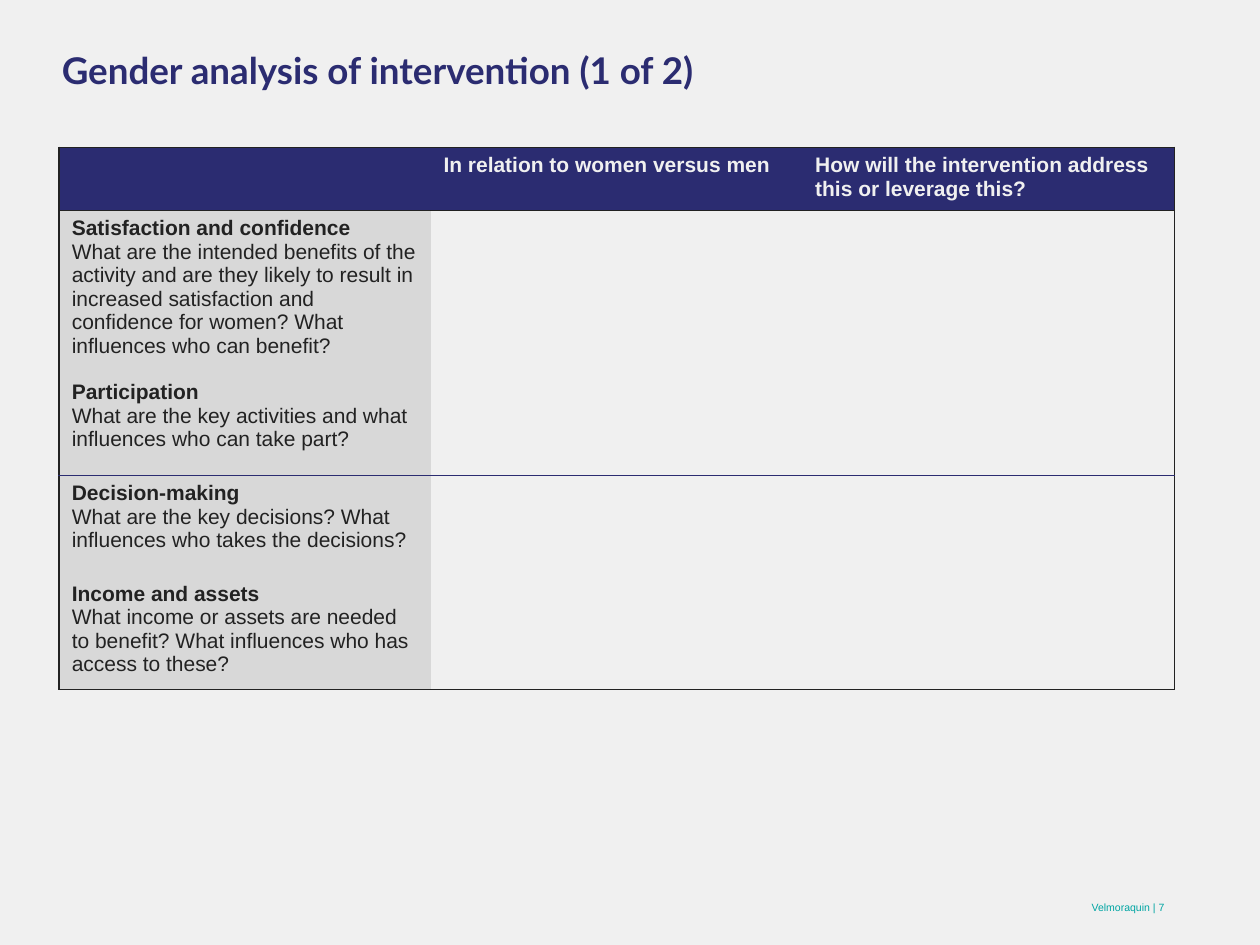
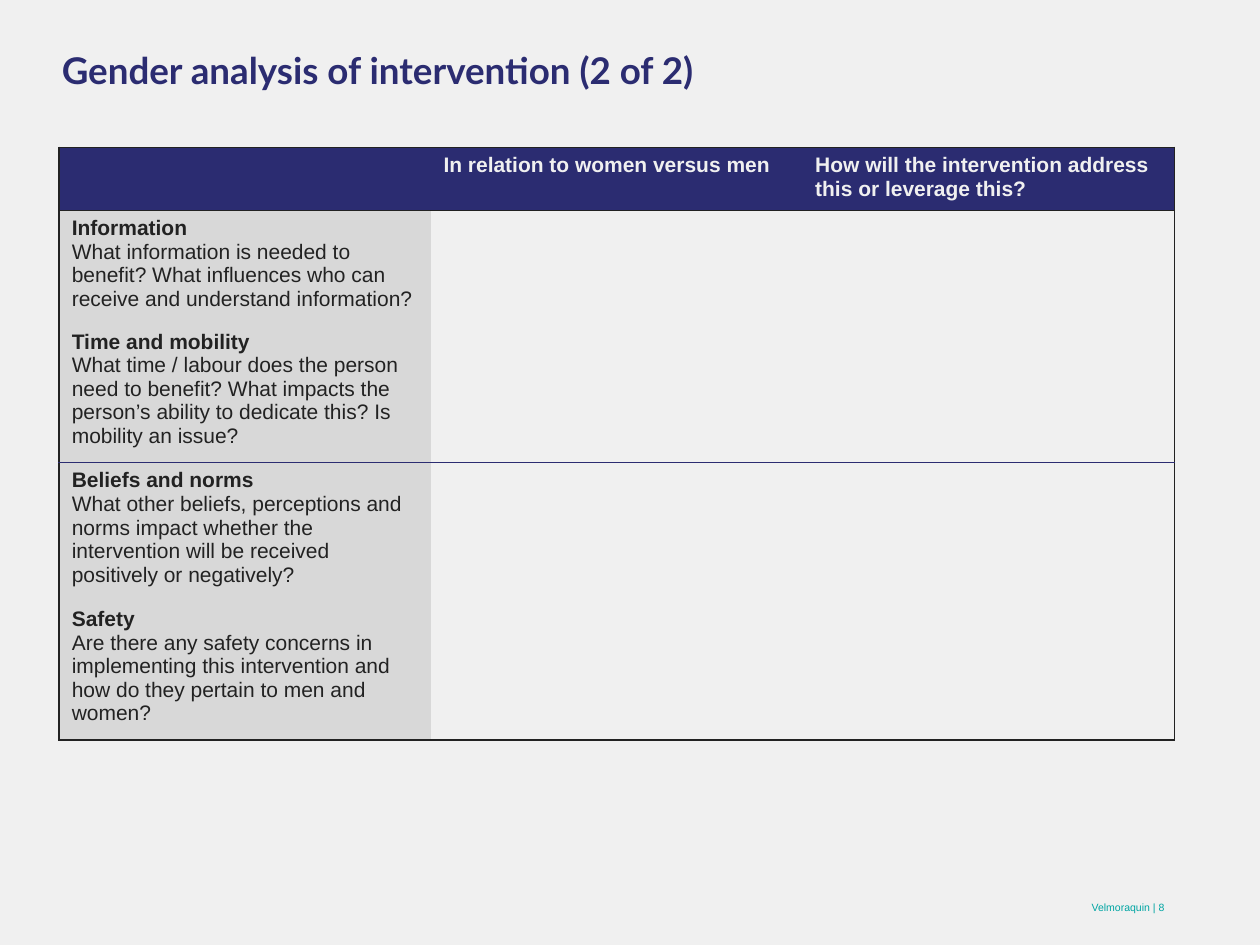
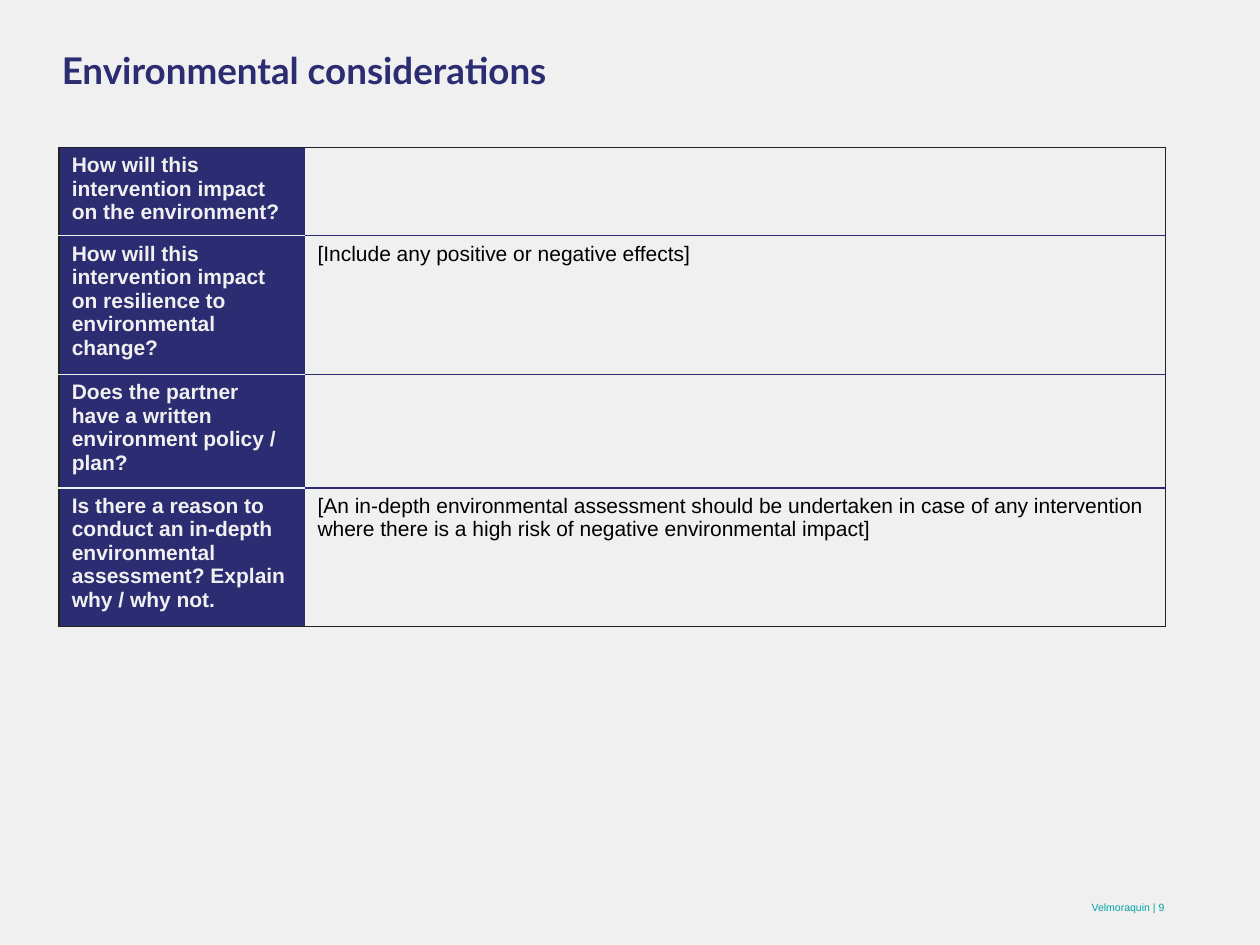
from dataclasses import dataclass
from typing import NamedTuple, Optional

import pptx
import pptx.dml.color
import pptx.enum.text
import pptx.oxml.ns
import pptx.util
from lxml import etree
from pptx.util import Inches, Pt

COLORS = {
    "paper": "F0F0F0",
    "navy": "2B2C71",
    "ink": "222222",
    "gray": "D8D8D8",
    "teal": "00A5A3",
    "black": "000000",
}
TITLE_FONT = "Lato"
BODY_FONT = "Arial"
ORGANISATION = "Velmoraquin"
FIRST_PAGE = 7
TABLE_LEFT, TABLE_TOP = 0.47, 1.17


class Line(NamedTuple):
    color: str
    width: float


class Text(NamedTuple):
    words: str
    color: str
    bold: bool = False


class Cell(NamedTuple):
    texts: tuple[Text, ...] = ()
    fill: Optional[str] = None


@dataclass
class TableSlide:
    """rows are least heights; rules maps a row to the lines above it, one for each column."""
    title: str
    columns: list[float]
    rows: list[float]
    cells: list[list[Cell]]
    rules: dict[int, list[Line]]


OUTLINE = Line("ink", 1)
NAVY_RULE = Line("navy", 1)
PAPER_RULE = Line("paper", 1)
SECTION_RULE = Line("navy", 0.75)


def rgb(color: str) -> pptx.dml.color.RGBColor:
    return pptx.dml.color.RGBColor.from_string(COLORS[color])


def style(paragraph, font_name: str, size: float, color: str, bold: bool = False) -> None:
    font = paragraph.font
    font.name, font.size, font.bold = font_name, Pt(size), bold
    font.color.rgb = rgb(color)


def add_title(slide, words: str) -> None:
    title = slide.shapes.title
    title.left, title.top = Inches(0.39), Inches(0.33)
    title.width, title.height = Inches(8.87), Inches(0.58)
    frame = title.text_frame
    frame.text = words
    frame.vertical_anchor = pptx.enum.text.MSO_ANCHOR.TOP
    paragraph = frame.paragraphs[0]
    paragraph.alignment = pptx.enum.text.PP_ALIGN.LEFT
    style(paragraph, TITLE_FONT, 21, "navy", True)


def add_footer(slide, page: int) -> None:
    footer = slide.shapes.add_textbox(Inches(7.01), Inches(7), Inches(2.33), Inches(0.4))
    frame = footer.text_frame
    frame.word_wrap = True
    frame.vertical_anchor = pptx.enum.text.MSO_ANCHOR.MIDDLE
    frame.text = f"{ORGANISATION} | {page}"
    paragraph = frame.paragraphs[0]
    paragraph.alignment = pptx.enum.text.PP_ALIGN.RIGHT
    style(paragraph, BODY_FONT, 6, "teal")


def set_borders(cell, borders: dict[str, Optional[Line]]) -> None:
    """Write the four edges; an edge without a line is cleared."""
    properties = cell._tc.get_or_add_tcPr()
    qn = pptx.oxml.ns.qn
    for side in "LRTB":
        line = borders[side]
        edge = etree.SubElement(properties, qn(f"a:ln{side}"))
        if line is None:
            etree.SubElement(edge, qn("a:noFill"))
        else:
            edge.set("w", str(Pt(line.width)))
            fill = etree.SubElement(edge, qn("a:solidFill"))
            etree.SubElement(fill, qn("a:srgbClr"), val=COLORS[line.color])


def fill_cell(cell, content: Cell) -> None:
    if content.fill:
        cell.fill.solid()
        cell.fill.fore_color.rgb = rgb(content.fill)
    else:
        cell.fill.background()
    frame = cell.text_frame
    frame.text = "\n".join(text.words for text in content.texts)
    for paragraph, text in zip(frame.paragraphs, content.texts):
        style(paragraph, BODY_FONT, 12, text.color, text.bold)


def add_table(slide, content: TableSlide) -> None:
    row_count, column_count = len(content.rows), len(content.columns)
    shape = slide.shapes.add_table(
        row_count, column_count, Inches(TABLE_LEFT), Inches(TABLE_TOP),
        Inches(sum(content.columns)), Inches(sum(content.rows)))
    table = shape.table
    table.first_row = table.horz_banding = False
    for column, width in zip(table.columns, content.columns):
        column.width = Inches(width)
    for row, height in zip(table.rows, content.rows):
        row.height = Inches(height)

    # Outer edges frame the table; neighbours agree on each inner line.
    rules = {0: [OUTLINE] * column_count, **content.rules, row_count: [OUTLINE] * column_count}
    no_rule = [None] * column_count
    for r, row_cells in enumerate(content.cells):
        for c, cell_content in enumerate(row_cells):
            cell = table.cell(r, c)
            set_borders(cell, {
                "L": OUTLINE if c == 0 else None,
                "R": OUTLINE if c == column_count - 1 else None,
                "T": rules.get(r, no_rule)[c],
                "B": rules.get(r + 1, no_rule)[c],
            })
            fill_cell(cell, cell_content)


def header(words: str) -> Cell:
    return Cell((Text(words, "paper", True),), "navy")


def gender_slide(part: int, rows: list[float], topics: list[tuple[str, str]]) -> TableSlide:
    cells = [[Cell(fill="navy"), header("In relation to women versus men"),
              header("How will the intervention address this or leverage this?")]]
    for topic, question in topics:
        texts = (Text(topic, "ink", True), Text(question, "ink"))
        cells.append([Cell(texts, "gray"), Cell(), Cell()])
    return TableSlide(f"Gender analysis of intervention ({part} of 2)", [2.95] * 3, rows,
                      cells, {1: [OUTLINE] * 3, 3: [SECTION_RULE] * 3})


def environment_slide(answers: list[tuple[str, str]]) -> TableSlide:
    cells = [[header(question), Cell((Text(hint, "black"),))] for question, hint in answers]
    rules = {row: [PAPER_RULE, NAVY_RULE] for row in range(1, len(cells))}
    return TableSlide("Environmental considerations", [1.95, 6.83],
                      [0.58] * len(cells), cells, rules)


SLIDES = [
    gender_slide(1, [0.5, 1.15, 0.8, 0.8, 0.8], [
        ("Satisfaction and confidence",
         "What are the intended benefits of the activity and are they likely to result in "
         "increased satisfaction and confidence for women? What influences who can benefit?"),
        ("Participation",
         "What are the key activities and what influences who can take part?"),
        ("Decision-making",
         "What are the key decisions? What influences who takes the decisions?"),
        ("Income and assets",
         "What income or assets are needed to benefit? What influences who has access to these?"),
    ]),
    gender_slide(2, [0.48, 0.53, 0.7, 0.53, 0.53], [
        ("Information",
         "What information is needed to benefit? What influences who can receive and "
         "understand information?"),
        ("Time and mobility",
         "What time / labour does the person need to benefit? What impacts the person’s "
         "ability to dedicate this? Is mobility an issue?"),
        ("Beliefs and norms",
         "What other beliefs, perceptions and norms impact whether the intervention will be "
         "received positively or negatively?"),
        ("Safety",
         "Are there any safety concerns in implementing this intervention and how do they "
         "pertain to men and women?"),
    ]),
    environment_slide([
        ("How will this intervention impact on the environment?", ""),
        ("How will this intervention impact on resilience to environmental change?",
         "[Include any positive or negative effects]"),
        ("Does the partner have a written environment policy / plan?", ""),
        ("Is there a reason to conduct an in-depth environmental assessment? "
         "Explain why / why not.",
         "[An in-depth environmental assessment should be undertaken in case of any "
         "intervention where there is a high risk of negative environmental impact]"),
    ]),
]


def main() -> None:
    presentation = pptx.Presentation()
    presentation.slide_width, presentation.slide_height = Inches(10), Inches(7.5)
    background = presentation.slide_master.background.fill
    background.solid()
    background.fore_color.rgb = rgb("paper")
    title_only = presentation.slide_layouts.get_by_name("Title Only")
    for page, content in enumerate(SLIDES, FIRST_PAGE):
        slide = presentation.slides.add_slide(title_only)
        add_title(slide, content.title)
        add_footer(slide, page)
        add_table(slide, content)
    presentation.save("out.pptx")


if __name__ == "__main__":
    main()
